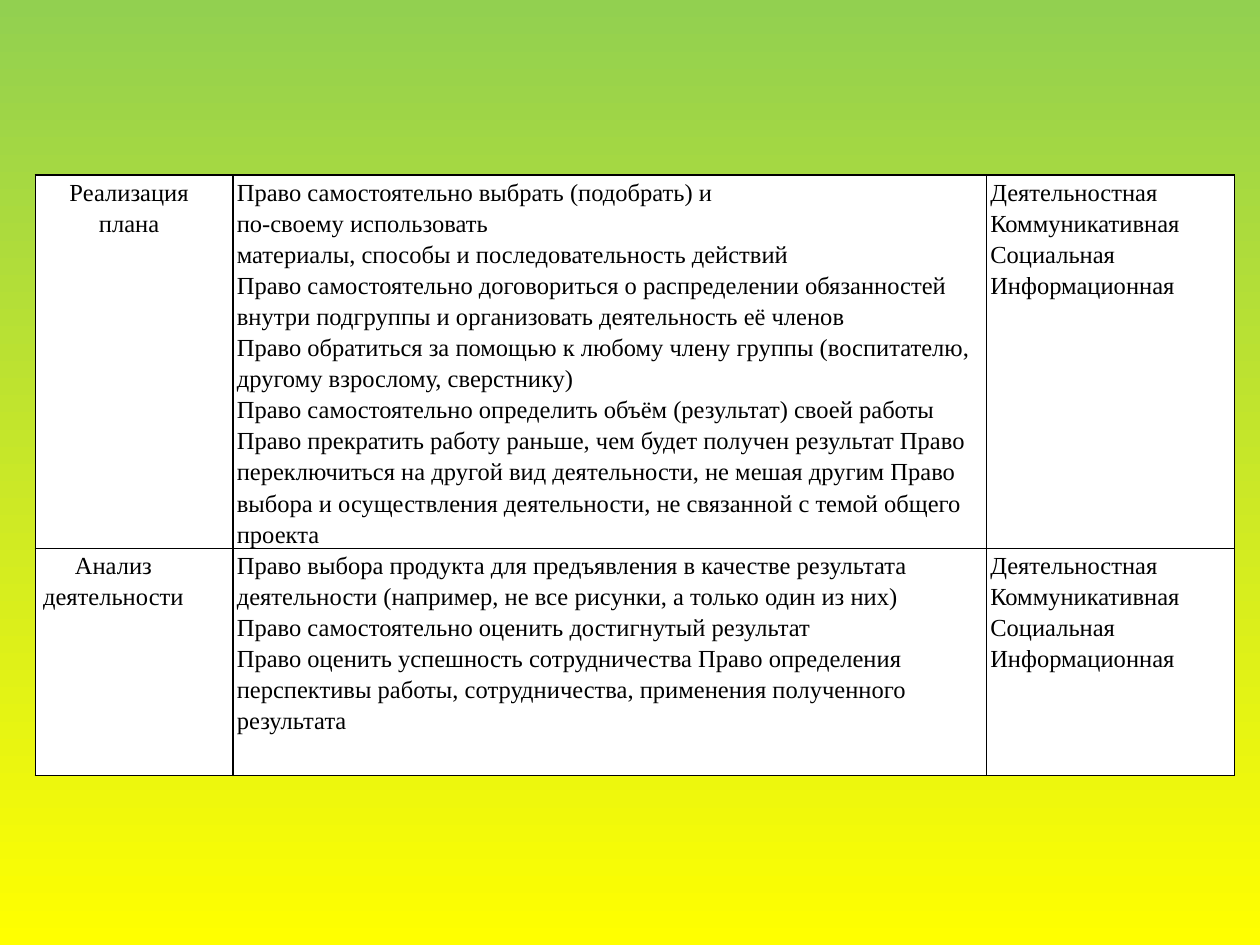
from lxml.etree import SubElement
from pptx import Presentation
from pptx.dml.color import RGBColor
from pptx.enum.text import PP_ALIGN as Align
from pptx.oxml.ns import qn
from pptx.util import Inches, Pt

FONT = "Times New Roman"
SKILLS = ["Деятельностная", "Коммуникативная", "Социальная", "Информационная"]
ROWS = [
    (
        ["Реализация плана"],
        [
            "Право самостоятельно выбрать (подобрать) и",
            "по-своему использовать",
            "материалы, способы и последовательность действий",
            "Право самостоятельно договориться о распределении обязанностей внутри подгруппы "
            "и организовать деятельность её членов",
            "Право обратиться за помощью к любому члену группы (воспитателю, другому взрослому, "
            "сверстнику)",
            "Право самостоятельно определить объём (результат) своей работы Право прекратить "
            "работу раньше, чем будет получен результат Право переключиться на другой вид "
            "деятельности, не мешая другим Право выбора и осуществления деятельности, "
            "не связанной с темой общего проекта",
        ],
        SKILLS,
    ),
    (
        ["Анализ деятельности"],
        [
            "Право выбора продукта для предъявления в качестве результата деятельности "
            "(например, не все рисунки, а только один из них)",
            "Право самостоятельно оценить достигнутый результат",
            "Право оценить успешность сотрудничества Право определения перспективы работы, "
            "сотрудничества, применения полученного результата",
        ],
        SKILLS,
    ),
]
COLUMN_WIDTHS = [1.57, 5.98, 1.97]
ROW_HEIGHT = 1.8
STAGE_RIGHT_INSETS = [0.11, 0.36]
INSET = 0.03


def color(hex_code):
    return RGBColor.from_string(hex_code)


def write(cell, lines, size=14, ink="000000", align=Align.LEFT, spacing=1.15):
    frame = cell.text_frame
    frame.word_wrap = True
    for index, line in enumerate(lines):
        para = frame.paragraphs[0] if index == 0 else frame.add_paragraph()
        para.alignment = align
        para.line_spacing = spacing
        span = para.add_run()
        span.text = line
        span.font.name = FONT
        span.font.size = Pt(size)
        span.font.color.rgb = color(ink)


def add_borders(cell, ink="000000", width=1):
    properties = cell._tc.get_or_add_tcPr()
    for position, side in enumerate(("lnL", "lnR", "lnT", "lnB")):
        line = SubElement(properties, qn(f"a:{side}"), w=str(Pt(width)))
        fill = SubElement(line, qn("a:solidFill"))
        SubElement(fill, qn("a:srgbClr"), val=ink)
        properties.insert(position, line)


def paint_background(slide, top, bottom):
    fill = slide.background.fill
    fill.gradient()
    fill.gradient_angle = 270
    for stop, position, ink in zip(fill.gradient_stops, (0, 1), (top, bottom)):
        stop.position = position
        stop.color.rgb = color(ink)


def add_rights_table(slide):
    table = slide.shapes.add_table(
        len(ROWS), len(COLUMN_WIDTHS), Inches(0.28), Inches(1.39),
        Inches(sum(COLUMN_WIDTHS)), Inches(ROW_HEIGHT * len(ROWS)),
    ).table
    table.first_row = table.horz_banding = False
    for column, width in zip(table.columns, COLUMN_WIDTHS):
        column.width = Inches(width)
    for row_index, row in enumerate(ROWS):
        table.rows[row_index].height = Inches(ROW_HEIGHT)
        for column_index, lines in enumerate(row):
            is_stage = column_index == 0
            cell = table.cell(row_index, column_index)
            cell.margin_top = cell.margin_bottom = 0
            cell.margin_left = Inches(INSET)
            cell.margin_right = Inches(STAGE_RIGHT_INSETS[row_index] if is_stage else INSET)
            cell.fill.solid()
            cell.fill.fore_color.rgb = color("FFFFFF")
            add_borders(cell)
            write(cell, lines, align=Align.CENTER if is_stage else Align.LEFT)


def main():
    deck = Presentation()
    deck.slide_width, deck.slide_height = Inches(10), Inches(7.5)
    page = deck.slides.add_slide(deck.slide_layouts[6])
    paint_background(page, "92D050", "FFFF00")
    add_rights_table(page)
    deck.save("out.pptx")


if __name__ == "__main__":
    main()
